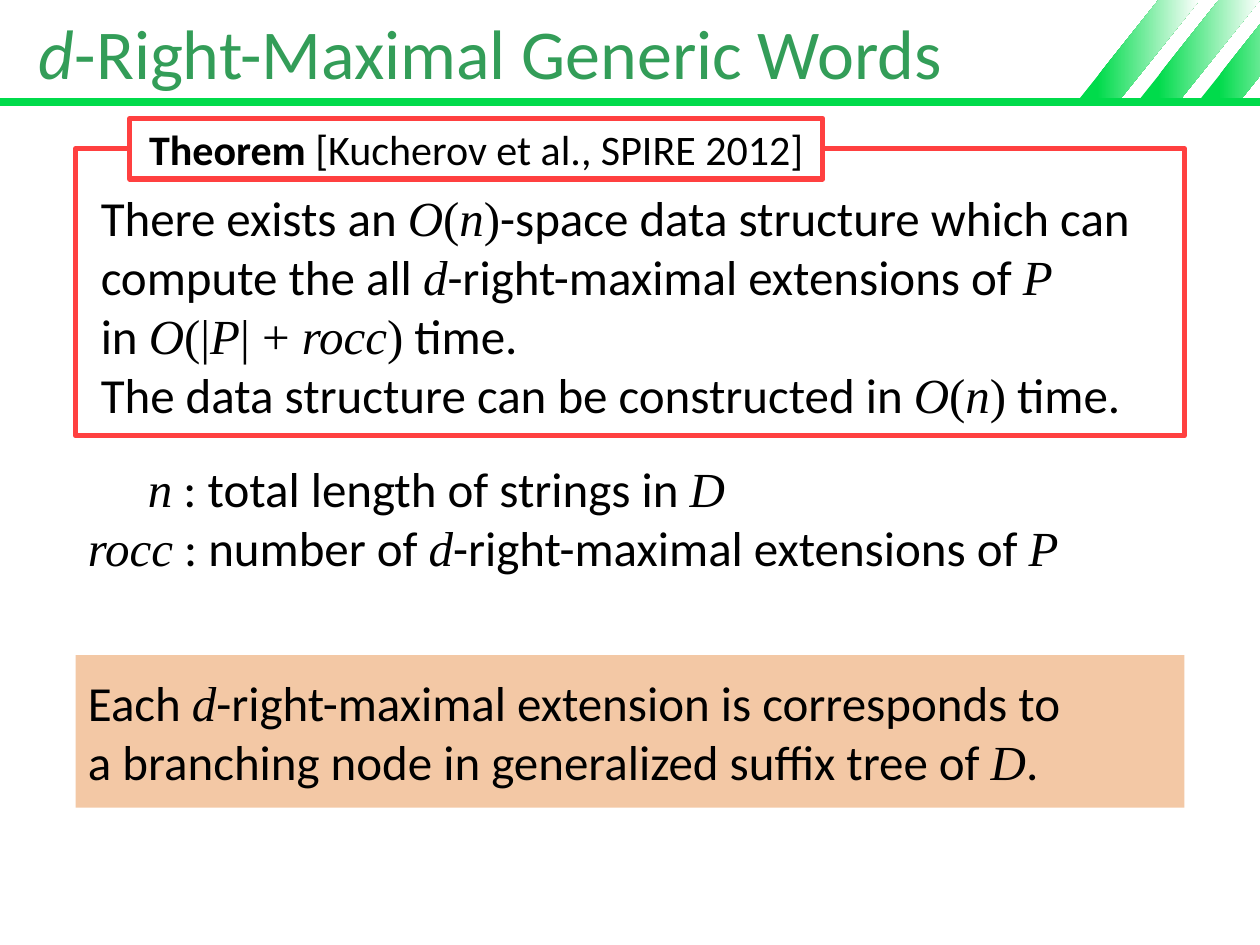
"""Build the slide on d-right-maximal generic words."""
from itertools import groupby

from pptx import Presentation
from pptx.dml.color import RGBColor
from pptx.enum.shapes import MSO_CONNECTOR, MSO_SHAPE
from pptx.enum.text import MSO_ANCHOR, PP_ALIGN
from pptx.oxml.ns import qn
from pptx.util import Pt

RECTANGLE = MSO_SHAPE.RECTANGLE
PARALLELOGRAM = MSO_SHAPE.PARALLELOGRAM
STRAIGHT = MSO_CONNECTOR.STRAIGHT
TOP, MIDDLE, BOTTOM = MSO_ANCHOR.TOP, MSO_ANCHOR.MIDDLE, MSO_ANCHOR.BOTTOM
LEFT, CENTER = PP_ALIGN.LEFT, PP_ALIGN.CENTER

SANS, MATH = "Calibri", "Times New Roman"
GREEN, TITLE_GREEN, RED = "00DB4B", "339D58", "FF4040"
BLACK, WHITE, PEACH = "000000", "FFFFFF", "F3C8A5"
MARGIN, CONTENT_WIDTH = 43.2, 633.6
BAR_Y = 58.3

THEOREM = (
    "There exists an $O(n)$-space data structure which can compute the all "
    "$d$-right-maximal extensions of $P$ \nin $O(|P| + rocc)$ time.\n"
    "The data structure can be constructed in $O(n)$ time."
)
REMARK = (
    "Each $d$-right-maximal extension is corresponds to \n"
    "a branching node in generalized suffix tree of $D$."
)
DEFINITIONS = [
    ("$n$ : total length of strings in $D$", 34.3),
    ("$rocc$ : number of $d$-right-maximal extensions of $P$", 0),
]


def color(hex_string):
    """Turn a hex string into a colour."""
    return RGBColor.from_string(hex_string)


def points(*lengths):
    """Turn numbers into point lengths."""
    return [Pt(length) for length in lengths]


def style_paragraph(paragraph, size, text_color=BLACK, align=LEFT):
    """Set what all runs of a paragraph share."""
    paragraph.alignment = align
    paragraph.font.size = Pt(size)
    paragraph.font.color.rgb = color(text_color)


def add_run(paragraph, text, font=SANS, italic=False, bold=False):
    """Append a run in the given font."""
    run = paragraph.add_run()
    run.text = text
    run.font.name = font
    run.font.italic = italic
    run.font.bold = bold


def add_prose(paragraph, text):
    """Write prose with $math$ parts, whose letters are italic."""
    style_paragraph(paragraph, 28)
    for index, part in enumerate(text.split("$")):
        if index % 2:
            for is_letter, symbols in groupby(part, str.isalpha):
                add_run(paragraph, "".join(symbols), MATH, italic=is_letter)
            continue
        for line_number, line in enumerate(part.split("\n")):
            if line_number:
                paragraph.add_line_break()
            if line:
                add_run(paragraph, line)


def add_text_area(shapes, box, anchor):
    """Add a wrapping text box and return its text frame."""
    frame = shapes.add_textbox(*points(*box)).text_frame
    frame.word_wrap = True
    frame.vertical_anchor = anchor
    return frame


def add_panel(shapes, box, anchor, fill=None, outline=None):
    """Add a rectangle and return its text frame."""
    panel = shapes.add_shape(RECTANGLE, *points(*box))
    panel.shadow.inherit = False
    if fill:
        panel.fill.solid()
        panel.fill.fore_color.rgb = color(fill)
    else:
        panel.fill.background()
    if outline:
        panel.line.color.rgb = color(outline)
        panel.line.width = Pt(3)
    else:
        panel.line.fill.background()
    frame = panel.text_frame
    frame.word_wrap = True
    frame.vertical_anchor = anchor
    return frame


def add_stripe(shapes, left):
    """Add one slanted stripe fading from green to white."""
    stripe = shapes.add_shape(PARALLELOGRAM, *points(left, 0, 68.4, 56.2))
    stripe.shadow.inherit = False
    stripe.adjustments[0] = 0.8
    stripe.line.fill.background()
    stripe.fill.gradient()
    stripe.fill.gradient_angle = 0
    fade = [(0.15, GREEN), (1, WHITE)]
    for stop, (position, shade) in zip(stripe.fill.gradient_stops, fade):
        stop.position = position
        stop.color.rgb = color(shade)


def add_header(shapes):
    """Add the stripes, the green bar and the title."""
    for index in reversed(range(3)):
        add_stripe(shapes, 617 + 34.6 * index)
    bar = shapes.add_connector(STRAIGHT, *points(0, BAR_Y, 720, BAR_Y))
    bar.line.color.rgb = color(GREEN)
    bar.line.width = Pt(4.5)
    properties = bar.element.spPr
    properties.append(properties.makeelement(qn("a:effectLst"), {}))
    title = add_text_area(shapes, (15.1, 0, CONTENT_WIDTH, BAR_Y), MIDDLE).paragraphs[0]
    style_paragraph(title, 40, TITLE_GREEN)
    add_run(title, "d", italic=True)
    add_run(title, "-Right-Maximal Generic Words")


def add_theorem(shapes):
    """Add the framed theorem with its label on the top edge."""
    group = shapes.add_group_shape().shapes
    statement = add_panel(group, (MARGIN, 85, CONTENT_WIDTH, 164), BOTTOM, outline=RED)
    statement.margin_left, statement.margin_right = points(14.4, 11.5)
    statement.margin_bottom = Pt(7.2)
    add_prose(statement.paragraphs[0], THEOREM)
    label_box = (74.2, 67.7, 396, 34.6)
    label = add_panel(group, label_box, MIDDLE, WHITE, RED).paragraphs[0]
    style_paragraph(label, 24, align=CENTER)
    add_run(label, "Theorem", bold=True)
    add_run(label, " [Kucherov et al., SPIRE 2012]")


def add_definitions(shapes):
    """Add the symbol definitions, each with its indent."""
    frame = add_text_area(shapes, (MARGIN, 258.5, CONTENT_WIDTH, 82.8), TOP)
    for index, (definition, indent) in enumerate(DEFINITIONS):
        paragraph = frame.add_paragraph() if index else frame.paragraphs[0]
        add_prose(paragraph, definition)
        paragraph._p.get_or_add_pPr().set("marL", str(Pt(indent)))


def add_remark(shapes):
    """Add the shaded remark."""
    box = (MARGIN, 374.4, CONTENT_WIDTH, 87.1)
    add_prose(add_panel(shapes, box, MIDDLE, PEACH).paragraphs[0], REMARK)


def main():
    """Build and save the slide."""
    presentation = Presentation()
    presentation.slide_width, presentation.slide_height = points(720, 540)
    shapes = presentation.slides.add_slide(presentation.slide_layouts[6]).shapes
    add_header(shapes)
    add_theorem(shapes)
    add_definitions(shapes)
    add_remark(shapes)
    presentation.save("out.pptx")


if __name__ == "__main__":
    main()
